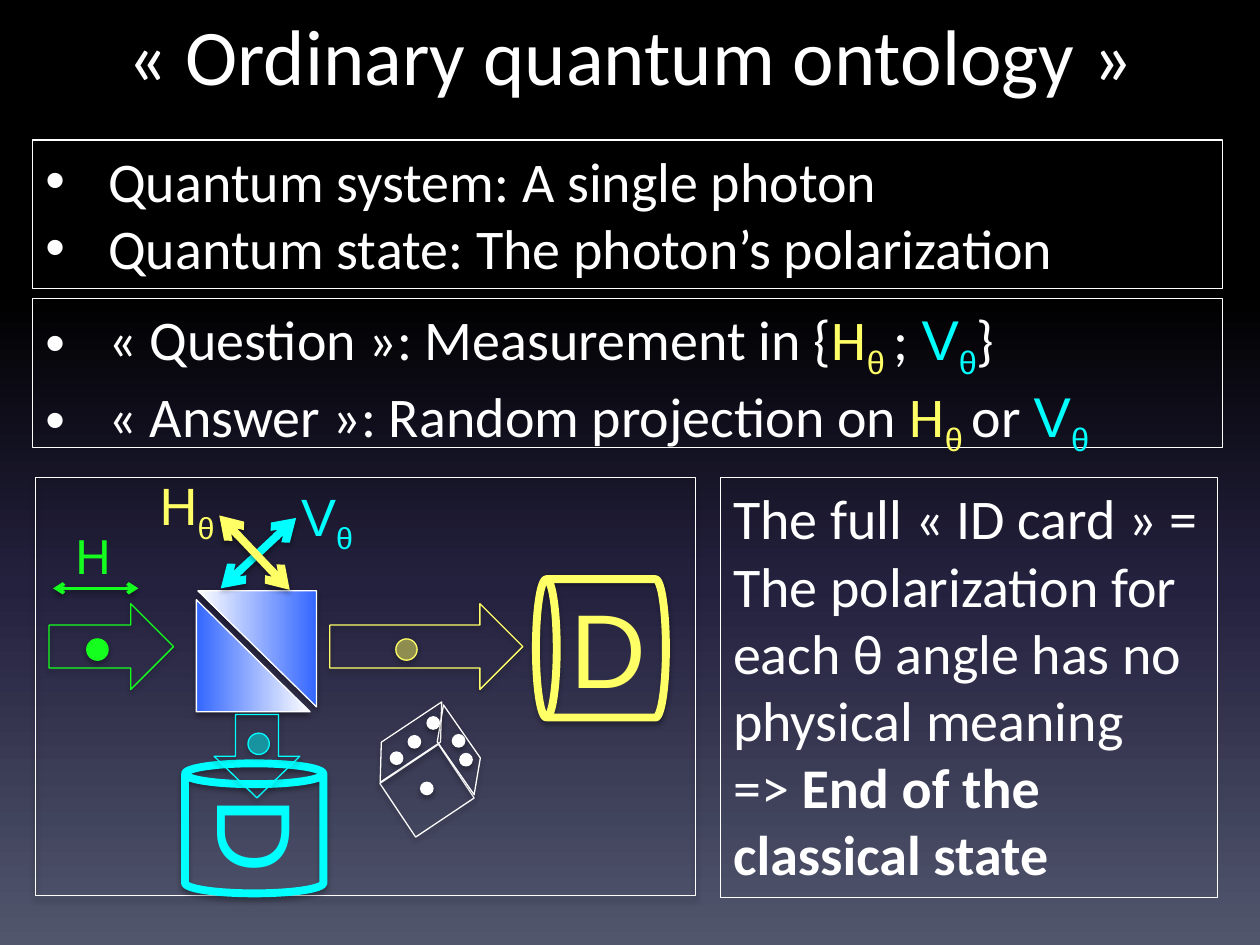
from lxml.etree import SubElement
from pptx import Presentation
from pptx.dml.color import RGBColor
from pptx.enum.shapes import MSO_CONNECTOR, MSO_SHAPE
from pptx.enum.text import MSO_ANCHOR, MSO_AUTO_SIZE, PP_ALIGN
from pptx.oxml.ns import qn
from pptx.util import Cm, Pt

HUES = {
    "white": "FFFFFF", "black": "000000", "green": "15FF1F",
    "yellow": "FFFF66", "cyan": "00FFFF", "blue": "3366FF",
    "night": "24213E", "slate": "51566D",
}


def rgb(hue):
    return RGBColor.from_string(HUES[hue])


def blend(fill, root, stops, angle):
    fill.gradient()
    fill.gradient_angle = angle
    group = next(root.iter(qn("a:gsLst")))
    for old in list(group):
        group.remove(old)
    for pos, hue in stops:
        stop = SubElement(group, qn("a:gs"), pos=str(pos * 1000))
        SubElement(stop, qn("a:srgbClr"), val=HUES[hue])


def shade(effects, alpha):
    drop = SubElement(effects, qn("a:outerShdw"), blurRad="40000",
                      dist="23000", dir="5400000", rotWithShape="0")
    tint = SubElement(drop, qn("a:srgbClr"), val=HUES["black"])
    SubElement(tint, qn("a:alpha"), val=str(alpha * 1000))


class Board:
    def __init__(self, slide):
        self.slide = slide
        self.shapes = slide.shapes
        self.face = "Calibri"
        self.size = 32
        self.thin = 0.75

    def place(self, item, box):
        item.left, item.top, item.width, item.height = map(Cm, box)

    def edge(self, item, hue="white", width=None):
        item.line.color.rgb = rgb(hue)
        item.line.width = Pt(width or self.thin)

    def backdrop(self, stops):
        fill = self.slide.background.fill
        blend(fill, self.slide.element, stops, 270)

    def letter(self, para, parts, size=None, face=None, hue="white"):
        para.font.size = Pt(size or self.size)
        para.font.name = face or self.face
        para.font.color.rgb = rgb(hue)
        para.space_before = Pt(0)
        for text, look in parts:
            run = para.add_run()
            run.text = text
            if "face" in look:
                run.font.name = look["face"]
            if "hue" in look:
                run.font.color.rgb = rgb(look["hue"])
            if "bold" in look:
                run.font.bold = True
            if "sub" in look:
                run.font._element.set("baseline", "-25000")

    def fit(self, item):
        frame = item.text_frame
        frame.word_wrap = True
        frame.auto_size = MSO_AUTO_SIZE.NONE
        frame.vertical_anchor = MSO_ANCHOR.TOP
        return frame

    def title(self, text, box):
        item = self.shapes.title
        self.place(item, box)
        para = self.fit(item).paragraphs[0]
        para.alignment = PP_ALIGN.CENTER
        self.letter(para, [(text, {})], 45)

    def prose(self, item, rows, bullet=False):
        self.edge(item)
        frame = self.fit(item)
        for num, parts in enumerate(rows):
            para = frame.add_paragraph() if num else frame.paragraphs[0]
            self.letter(para, parts)
            if bullet:
                props = para._p.get_or_add_pPr()
                props.set("marL", str(Cm(1.27)))
                props.set("indent", str(-Cm(1.27)))

    def bullets(self, slot, rows, box):
        item = self.slide.placeholders[slot]
        self.place(item, box)
        self.prose(item, rows, True)

    def panel(self, rows, box):
        self.prose(self.shapes.add_textbox(*map(Cm, box)), rows)

    def label(self, parts, box, hue, size, turn=0):
        item = self.shapes.add_textbox(*map(Cm, box))
        item.rotation = turn
        frame = item.text_frame
        frame.word_wrap = False
        frame.auto_size = MSO_AUTO_SIZE.SHAPE_TO_FIT_TEXT
        self.letter(frame.paragraphs[0], parts, size, "Arial", hue)

    def shape(self, kind, box, hue="white", width=None, turn=0, adj=None,
              fill=None, alpha=None):
        item = self.shapes.add_shape(kind, *map(Cm, box))
        item.rotation = turn
        if adj is not None:
            item.adjustments[0] = adj
        if fill:
            item.fill.solid()
            item.fill.fore_color.rgb = rgb(fill)
        else:
            item.fill.background()
        if alpha:
            tint = next(item._element.spPr.iter(qn("a:srgbClr")))
            SubElement(tint, qn("a:alpha"), val=str(alpha * 1000))
        self.edge(item, hue, width)
        item.shadow.inherit = False
        shade(next(item._element.iter(qn("a:effectLst"))), 35)
        return item

    def prism(self, box, turn):
        item = self.shape(MSO_SHAPE.RIGHT_TRIANGLE, box, turn=turn)
        blend(item.fill, item._element, [(0, "blue"), (100, "white")], 0)

    def dot(self, left, top, size, hue, alpha=None):
        self.shape(MSO_SHAPE.OVAL, (left, top, size, size), hue,
                   fill=hue, alpha=alpha)

    def arrow(self, ends, hue, width):
        item = self.shapes.add_connector(MSO_CONNECTOR.STRAIGHT, *map(Cm, ends))
        self.edge(item, hue, width)
        line = item.line._get_or_add_ln()
        for tip in ("headEnd", "tailEnd"):
            SubElement(line, qn("a:" + tip), type="arrow")
        shade(SubElement(item._element.spPr, qn("a:effectLst")), 38)


def theta(sign, face, tail):
    hue = {"H": "yellow", "V": "cyan"}[sign]
    return [(sign, {"hue": hue, "face": face}),
            ("θ" + tail, {"hue": hue, "face": "Arial", "sub": True})]


def main():
    deck = Presentation()
    deck.slide_width, deck.slide_height = Cm(25.4), Cm(19.05)
    board = Board(deck.slides.add_slide(deck.slide_layouts[3]))
    board.backdrop([(0, "black"), (31, "black"), (62, "night"), (100, "slate")])

    board.title("« Ordinary quantum ontology »", (1.27, 0, 22.86, 3.18))
    board.bullets(1, [
        [("Quantum system: A single photon", {})],
        [("Quantum state: The photon’s polarization", {})],
    ], (0.66, 2.82, 23.98, 3))
    high, vert = theta("H", "Calibri", " "), theta("V", "Arial", "")
    board.bullets(2, [
        [("« Question »: Measurement in {", {}), *high, ("; ", {}), *vert, ("} ", {})],
        [("« Answer »: Random projection on ", {}), *high, ("or ", {}), *vert],
    ], (0.66, 6.02, 23.98, 3))
    board.panel([
        [("The full « ID card » = The polarization for each θ angle "
          "has no physical meaning", {})],
        [("=> ", {}), ("End of the classical state", {"bold": True})],
    ], (14.53, 9.63, 10.01, 8.46))

    board.shape(MSO_SHAPE.RECTANGLE, (0.71, 9.63, 13.31, 8.43))
    board.label(theta("H", "Arial", ""), (2.97, 9.42, 1.68, 1.55), "yellow", 30)
    board.label(theta("V", "Arial", ""), (5.82, 9.63, 1.65, 1.55), "cyan", 30)
    board.label([("H", {})], (1.27, 10.46, 1.24, 1.45), "green", 28)
    board.prism((3.96, 12.09, 2.29, 2.26), 0)
    board.prism((3.99, 11.91, 2.39, 2.34), 180)
    board.arrow((5.97, 10.44, 4.45, 11.86), "cyan", 4.5)
    board.arrow((5.84, 11.89, 4.42, 10.39), "yellow", 4.5)
    board.arrow((1.07, 11.86, 2.79, 11.86), "green", 2)

    for hue, can, mark, turn, spin in (
        ("yellow", (10.72, 11.76), (11.25, 11.63), 270, 0),
        ("cyan", (3.73, 15.39), (4.19, 15.44), 0, 90),
    ):
        board.shape(MSO_SHAPE.CAN, (*can, 2.79, 2.62), hue, 4.5, turn, 0.16)
        board.label([("D", {})], (*mark, 2.06, 2.82), hue, 60, spin)

    for hue, box, turn, dot, alpha in (
        ("green", (0.99, 12.17, 2.51, 1.73), 0, (1.75, 12.88), None),
        ("yellow", (6.65, 12.17, 3.89, 1.73), 0, (7.98, 12.88), 49),
        ("cyan", (4.34, 14.38, 1.68, 1.73), 90, (5, 14.78), 49),
    ):
        board.shape(MSO_SHAPE.RIGHT_ARROW, box, hue, turn=turn)
        board.dot(*dot, 0.43, hue, alpha)

    tilt = 326.3
    board.shape(MSO_SHAPE.RECTANGLE, (7.9, 15.29, 1.42, 1.3), turn=tilt)
    board.shape(MSO_SHAPE.PARALLELOGRAM, (7.32, 14.63, 1.93, 0.66),
                turn=tilt, adj=0.71)
    board.shape(MSO_SHAPE.PARALLELOGRAM, (8.41, 14.66, 1.68, 0.91),
                turn=279.6, adj=1.02)
    for left, top in ((8.48, 15.77), (9.27, 15.19), (9.12, 14.81),
                      (7.87, 15.16), (8.23, 14.83), (8.61, 14.45)):
        board.dot(left, top, 0.25, "white")

    deck.save("out.pptx")


if __name__ == "__main__":
    main()
